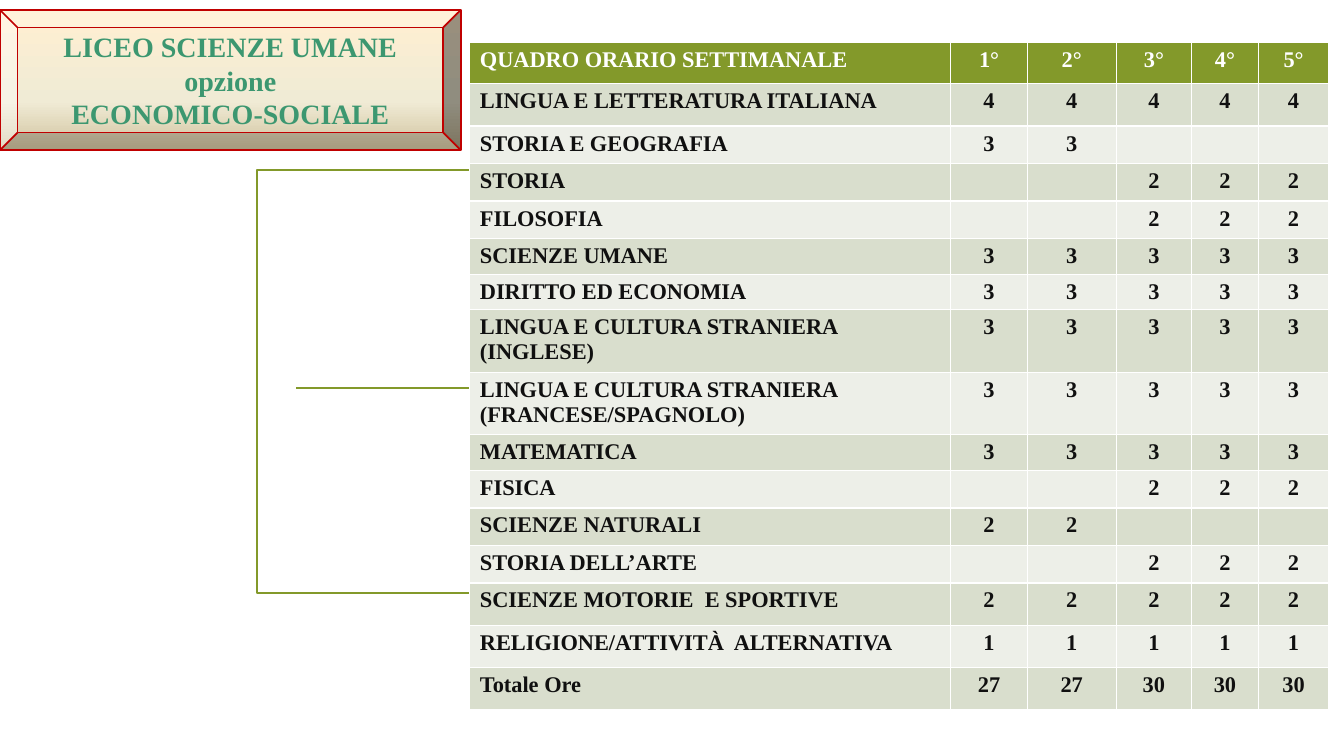
from copy import deepcopy

from lxml import etree
from pptx import Presentation
from pptx.dml.color import RGBColor
from pptx.enum import shapes, text
from pptx.oxml.ns import qn
from pptx.util import Emu, Inches, Pt

COLORS = {"olive": "83992A", "band": "D9DECD", "pale": "EDEFE8", "ink": "101010",
          "white": "FFFFFF", "red": "C00000", "green": "3C9770"}
BEVEL_STOPS = [(0, "FFEFD1"), (0.65, "F0EBD5"), (1, "D1C39F")]
FONT = "Times New Roman"

# Subject, weekly hours in each of years 1-2, hours in each of years 3-5
SUBJECTS = [
    ("LINGUA E LETTERATURA ITALIANA", "4", "4"),
    ("STORIA E GEOGRAFIA", "3", ""),
    ("STORIA", "", "2"),
    ("FILOSOFIA", "", "2"),
    ("SCIENZE UMANE", "3", "3"),
    ("DIRITTO ED ECONOMIA", "3", "3"),
    ("LINGUA E CULTURA STRANIERA (INGLESE)", "3", "3"),
    ("LINGUA E CULTURA STRANIERA (FRANCESE/SPAGNOLO)", "3", "3"),
    ("MATEMATICA", "3", "3"),
    ("FISICA", "", "2"),
    ("SCIENZE NATURALI", "2", ""),
    ("STORIA DELL’ARTE", "", "2"),
    ("SCIENZE MOTORIE  E SPORTIVE", "2", "2"),
    ("RELIGIONE/ATTIVITÀ  ALTERNATIVA", "1", "1"),
    ("Totale Ore", "27", "30"),
]
COLUMN_WIDTHS = [4.77, 0.76, 0.88, 0.75, 0.66, 0.7]
ROW_HEIGHTS = [0.41, 0.42] + [0.354] * 5 + [0.62] * 2 + [0.354] * 4 + [0.42] * 3

deck = Presentation()
deck.slide_width, deck.slide_height = Inches(13.33), Inches(7.5)
page = deck.slides.add_slide(deck.slide_layouts[5])


def place(left, top, width, height):
    """Turn percentages of the slide into lengths."""
    sides = (deck.slide_width, deck.slide_height) * 2
    return [Emu(int(side * share / 100))
            for side, share in zip(sides, (left, top, width, height))]


def write(para, words, size, color, align):
    para.alignment = align
    if not words:
        etree.SubElement(para._p, qn("a:endParaRPr"), sz=str(size * 100))
        return
    span = para.add_run()
    span.text = words
    for name, value in {"name": FONT, "size": Pt(size), "bold": True}.items():
        setattr(span.font, name, value)
    span.font.color.rgb = RGBColor.from_string(COLORS[color])


# Frame and rule behind the table
frame = page.shapes.add_shape(shapes.MSO_SHAPE.RECTANGLE, *place(19.13, 22.53, 61.89, 55.87))
frame.shadow.inherit = False
frame.fill.background()
left, top, width, _ = place(22.06, 51.33, 55.96, 0)
rule = page.shapes.add_connector(shapes.MSO_CONNECTOR.STRAIGHT, left, top, left + width, top)
etree.SubElement(rule._element.spPr, qn("a:effectLst"))

# Timetable
table = page.shapes.add_table(len(ROW_HEIGHTS), len(COLUMN_WIDTHS),
                              *place(34.96, 5.6, 63.92, 86.67)).table
for column, inches in zip(table.columns, COLUMN_WIDTHS):
    column.width = Inches(inches)
for row, inches in zip(table.rows, ROW_HEIGHTS):
    row.height = Inches(inches)

lines = [["QUADRO ORARIO SETTIMANALE"] + [f"{year}°" for year in range(1, 6)]]
lines += [[subject] + [early] * 2 + [late] * 3 for subject, early, late in SUBJECTS]
for r, line in enumerate(lines):
    fill = "olive" if r == 0 else "band" if r % 2 else "pale"
    for c, words in enumerate(line):
        cell = table.cell(r, c)
        cell.fill.solid()
        cell.fill.fore_color.rgb = RGBColor.from_string(COLORS[fill])
        write(cell.text_frame.paragraphs[0], words, 16, "ink" if r else "white",
              text.PP_ALIGN.CENTER if c else text.PP_ALIGN.LEFT)

# Bevelled plaque with a three-stop gradient
plaque = page.shapes.add_shape(shapes.MSO_SHAPE.BEVEL, *place(0, 1.33, 34.28, 18.53))
plaque.shadow.inherit = False
plaque.fill.gradient()
plaque.fill.gradient_angle = 270
stop_list = plaque._element.spPr.find(".//" + qn("a:gsLst"))
stop_list.append(deepcopy(stop_list[0]))
for stop, (position, color) in zip(plaque.fill.gradient_stops, BEVEL_STOPS):
    stop.position = position
    stop.color.rgb = RGBColor.from_string(color)

for outlined, color in ((frame, "olive"), (rule, "olive"), (plaque, "red")):
    outlined.line.color.rgb = RGBColor.from_string(COLORS[color])
    outlined.line.width = Pt(1.25)

# Title on the face of the plaque
title = page.shapes.title
page.shapes._spTree.append(title._element)
title.left, title.top, title.width, title.height = place(1.3, 3.65, 31.68, 13.9)
box = title.text_frame
for name, value in {"margin_left": 0, "margin_right": 0, "margin_top": 0, "margin_bottom": 0,
                    "word_wrap": True, "auto_size": text.MSO_AUTO_SIZE.NONE,
                    "vertical_anchor": text.MSO_ANCHOR.MIDDLE}.items():
    setattr(box, name, value)
for i, words in enumerate(["LICEO SCIENZE UMANE", "opzione", "ECONOMICO-SOCIALE"]):
    para = box.add_paragraph() if i else box.paragraphs[0]
    write(para, words, 20, "green", text.PP_ALIGN.CENTER)

deck.save("out.pptx")
